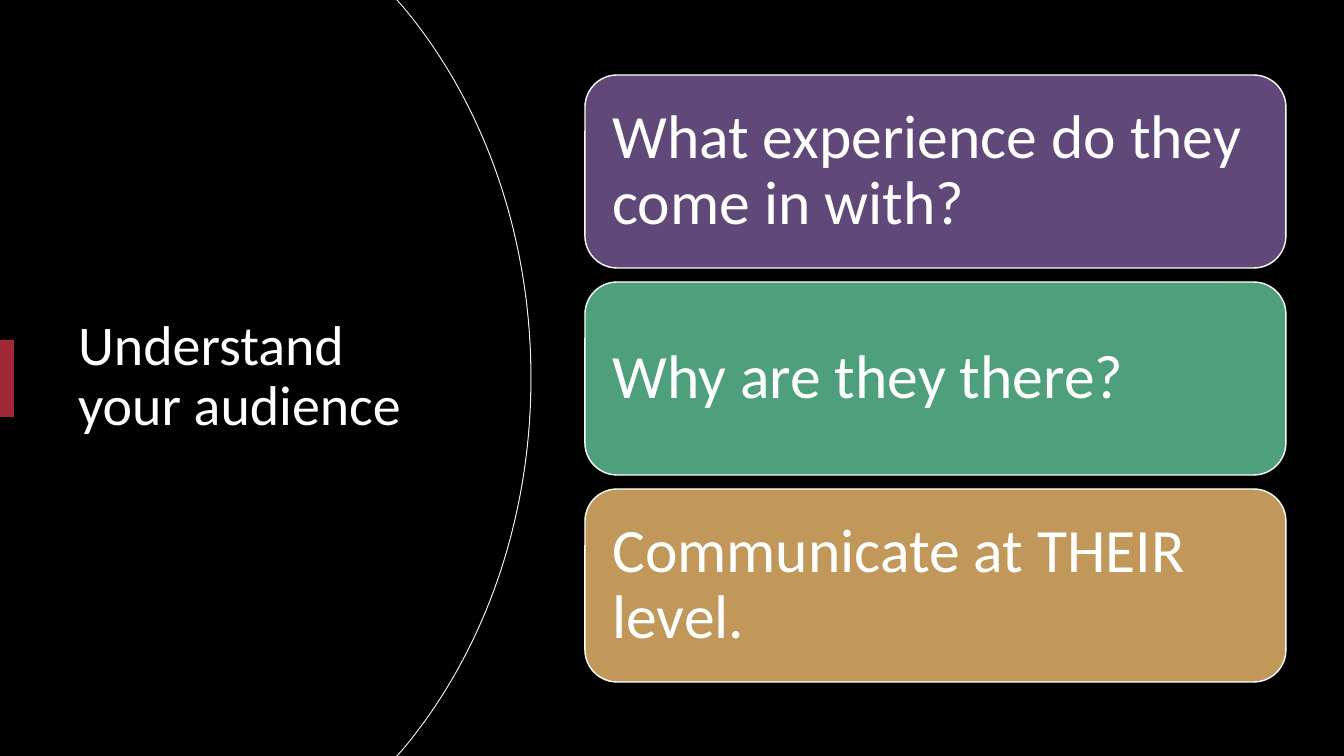
from lxml import etree
from pptx import Presentation
from pptx.dml.color import RGBColor
from pptx.enum.shapes import MSO_SHAPE
from pptx.enum.text import MSO_ANCHOR, MSO_AUTO_SIZE, PP_ALIGN
from pptx.oxml.ns import qn
from pptx.util import Pt

RECT, ROUND_RECT = MSO_SHAPE.RECTANGLE, MSO_SHAPE.ROUNDED_RECTANGLE
MIDDLE, LEFT, NO_FIT = MSO_ANCHOR.MIDDLE, PP_ALIGN.LEFT, MSO_AUTO_SIZE.NONE

EMU_PER_PX = 914400 / 100.8
SLIDE_W, SLIDE_H = 1344, 756
TITLE_ONLY = 5
FONT = "Calibri"
COLORS = {
    "black": "000000", "white": "FFFFFF", "rim": "EFEFEF", "accent": "9F2936",
    "purple": "604878", "green": "4DA07B", "gold": "C19859",
}
QUESTIONS = [
    ("What experience do they come in with?", "purple"),
    ("Why are they there?", "green"),
    ("Communicate at THEIR level.", "gold"),
]


def px(length):
    return round(length * EMU_PER_PX)


def rgb(name):
    return RGBColor.from_string(COLORS[name])


def paint(shape, fill, line=None, width=1):
    shape.shadow.inherit = False
    shape.fill.solid()
    shape.fill.fore_color.rgb = rgb(fill)
    if line:
        shape.line.color.rgb = rgb(line)
        shape.line.width = Pt(width)
    else:
        shape.line.fill.background()


def write(shape, text, size, inset=None):
    frame = shape.text_frame
    frame.text = text
    frame.word_wrap = True
    frame.auto_size = NO_FIT
    frame.vertical_anchor = MIDDLE
    if inset is not None:
        frame.margin_left = frame.margin_right = px(inset)
        frame.margin_top = frame.margin_bottom = px(inset)
    paragraph = frame.paragraphs[0]
    paragraph.alignment = LEFT
    paragraph.line_spacing = 0.9
    font = paragraph.runs[0].font
    font.name, font.size, font.color.rgb = FONT, Pt(size), rgb("white")


def bend(segment, controls):
    """Turn a straight outline segment into a cubic curve."""
    curve = etree.Element(qn("a:cubicBezTo"))
    for x, y in controls:
        etree.SubElement(curve, qn("a:pt"), x=str(px(x)), y=str(px(y)))
    curve.append(segment[0])
    segment.getparent().replace(segment, curve)


def add_curved_panel(slide, left, top, width, height, line=None):
    """Panel with straight left side and bulging right side."""
    outline = [(width - 134, 0), (width - 127, 8), (width, height / 2),
               (width - 127, height - 8), (width - 134, height), (0, height)]
    builder = slide.shapes.build_freeform(px(left), px(top))
    builder.add_line_segments([(px(left + x), px(top + y)) for x, y in outline],
                              close=True)
    panel = builder.convert_to_shape()
    segments = list(panel._element.iter(qn("a:lnTo")))
    bend(segments[2], [(width - 48, 103), (width, 234)])
    bend(segments[3], [(width, height - 234), (width - 48, height - 103)])
    paint(panel, "black", line, 0.75)


def add_title_panel(slide, left, top, width, height):
    # Rimmed panel with a plain one on top
    add_curved_panel(slide, left, top, width, height, "rim")
    add_curved_panel(slide, left, top, width - 1, height)

    # Title, brought in front of the panels
    title = slide.shapes.title
    slide.shapes._spTree.append(title._element)
    title.left, title.top = px(left + 68), px(top + 128)
    title.width, title.height = px(397), px(499)
    write(title, "Understand your audience", 40)

    # Accent tab at the edge
    tab = slide.shapes.add_shape(RECT, px(left), px(top + 340), px(14), px(77))
    paint(tab, "accent")


def add_question_cards(slide, left, top, width, height, gap=14):
    card_height = (height - gap * (len(QUESTIONS) - 1)) / len(QUESTIONS)
    for index, (question, color) in enumerate(QUESTIONS):
        card_top = top + index * (card_height + gap)
        card = slide.shapes.add_shape(ROUND_RECT, px(left), px(card_top),
                                      px(width), px(card_height))
        paint(card, color, "white")
        write(card, question, 44, inset=18)


def main():
    deck = Presentation()
    deck.slide_width, deck.slide_height = px(SLIDE_W), px(SLIDE_H)
    slide = deck.slides.add_slide(deck.slide_layouts[TITLE_ONLY])
    slide.background.fill.solid()
    slide.background.fill.fore_color.rgb = rgb("black")
    add_title_panel(slide, 0, 0, 531, SLIDE_H)
    add_question_cards(slide, 585, 75, 701, 607)
    deck.save("out.pptx")


if __name__ == "__main__":
    main()
